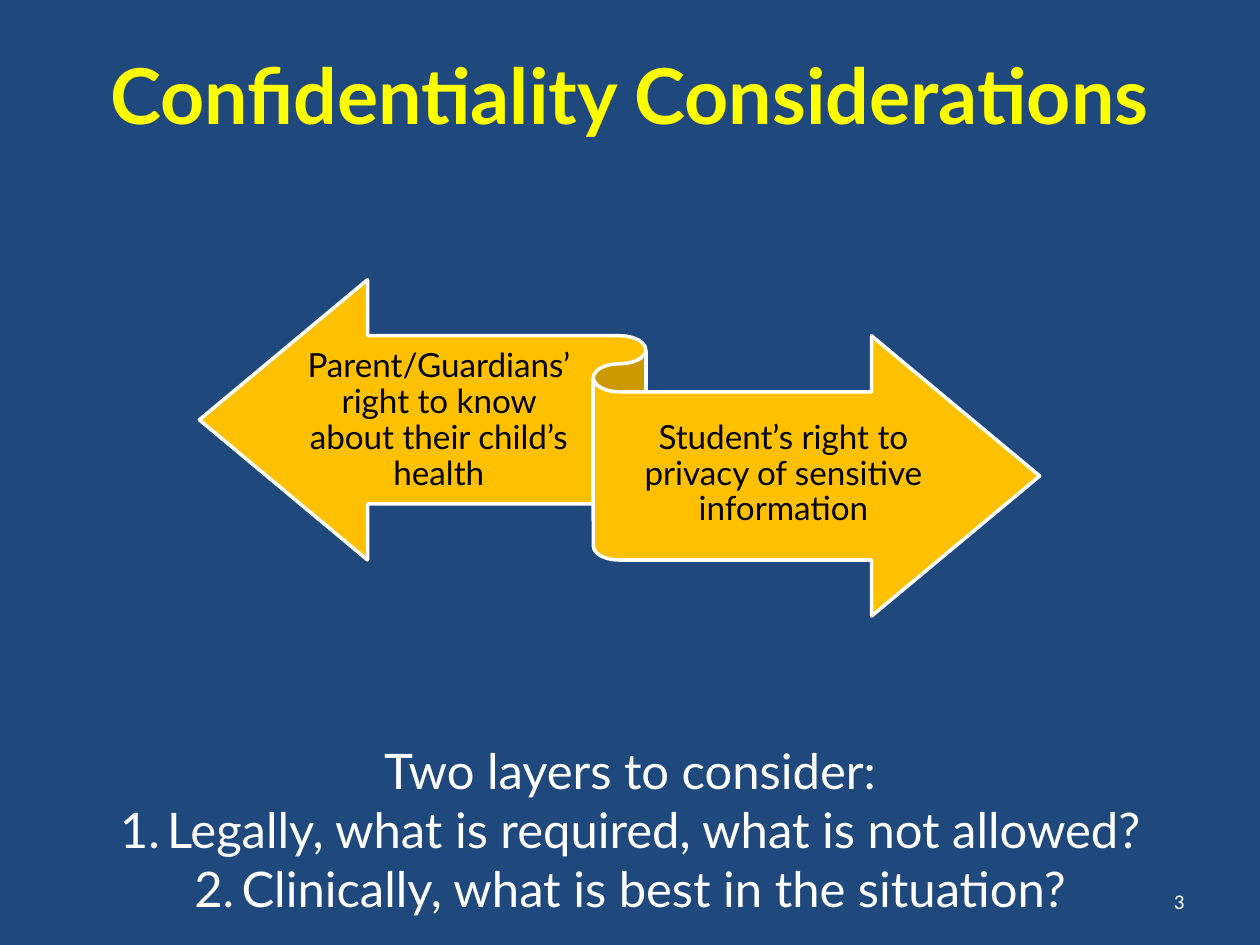
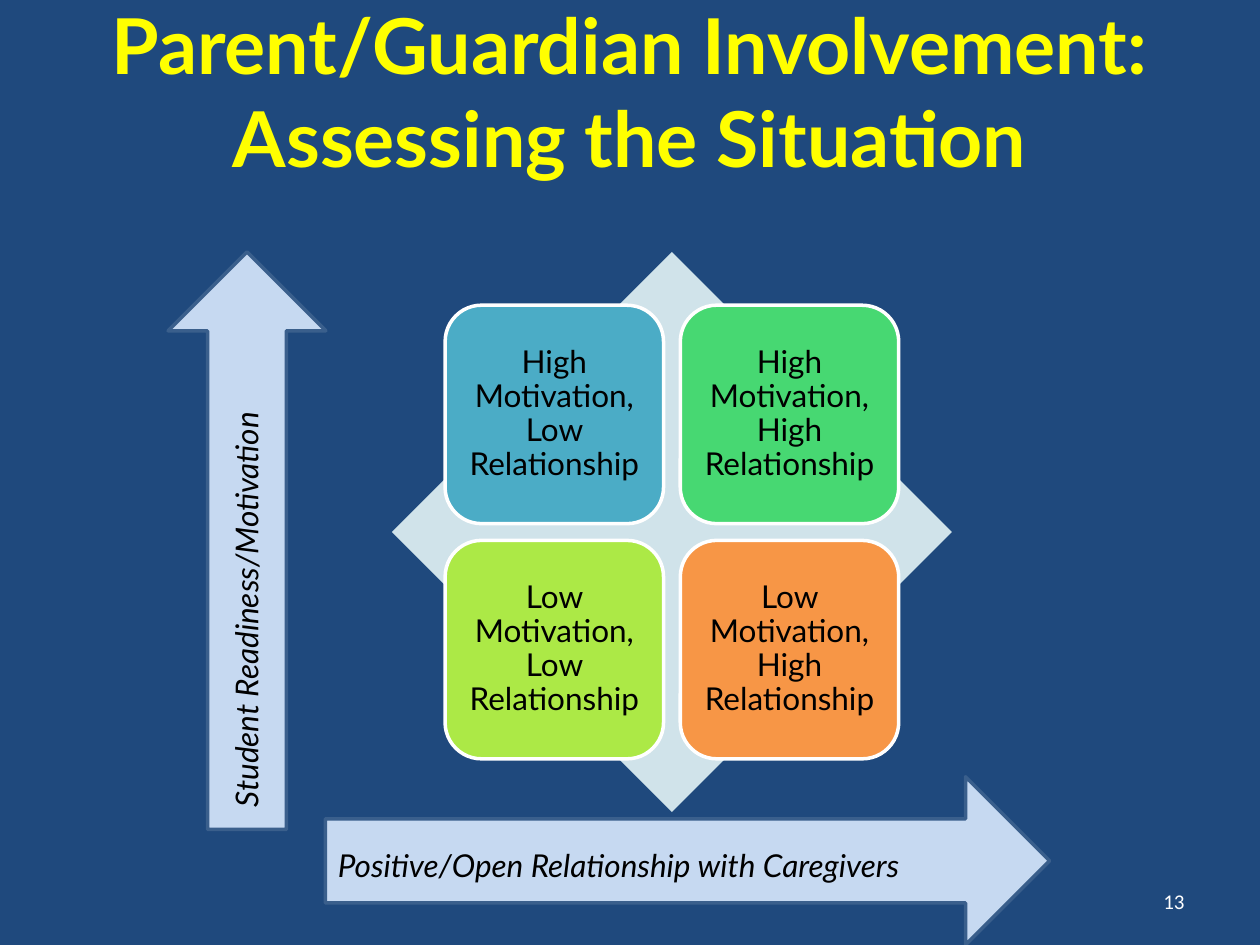
from lxml.etree import SubElement
from pptx import Presentation
from pptx.dml.color import RGBColor
from pptx.enum.shapes import MSO_SHAPE as SHAPE
from pptx.enum.text import MSO_ANCHOR as ANCHOR, MSO_AUTO_SIZE as FIT, PP_ALIGN as ALIGN
from pptx.oxml.ns import qn
from pptx.util import Cm, Pt

COLORS = {
    "background": "1F497D", "title": "FFFF00", "light": "FFFFFF", "dark": "000000",
    "ribbon": "FFC000", "diamond": "D0E3EA", "axis": "C6D9F1", "axis_line": "3A5F8C",
    "blue": "4BACC6", "green": "47D872", "lime": "ACE946", "orange": "F79646",
}
FONT = "Lato"
SLIDE_W, SLIDE_H = 25.4, 19.05
TITLE = {"size": 44, "color": "title", "bold": True}
LIST = {"size": 28, "color": "light"}
RIBBON_LABEL = {"size": 19, "color": "dark"}
TILE_LABEL = {"size": 18, "color": "dark"}
AXIS_LABEL = {"size": 18, "color": "dark", "italic": True}
PAGE_NUMBER = {"size": 12, "color": "light", "name": "Calibri"}


def rgb(name):
    return RGBColor.from_string(COLORS[name])


def place(sp, box):
    for side, value in zip(("left", "top", "width", "height"), box):
        setattr(sp, side, Cm(value))


def write(sp, lines, font, align=ALIGN.CENTER, anchor=ANCHOR.TOP, spacing=1.0, insets=None):
    """Fill a shape with paragraphs; insets are left, top, right, bottom in cm."""
    tf = sp.text_frame
    frame_format = {"word_wrap": True, "auto_size": FIT.NONE, "vertical_anchor": anchor}
    if insets:
        sides = ("margin_left", "margin_top", "margin_right", "margin_bottom")
        frame_format.update(zip(sides, map(Cm, insets)))
    for key, value in frame_format.items():
        setattr(tf, key, value)

    font_format = {"name": FONT, **font, "size": Pt(font["size"])}
    color = font_format.pop("color")
    for i, line in enumerate(lines):
        p = tf.paragraphs[0] if i == 0 else tf.add_paragraph()
        p.alignment, p.line_spacing, p.space_before = align, spacing, Pt(0)
        r = p.add_run()
        r.text = line
        for key, value in font_format.items():
            setattr(r.font, key, value)
        r.font.color.rgb = rgb(color)
    return tf


def add_text(slide, box, line, font, **layout):
    sp = slide.shapes.add_textbox(*map(Cm, box))
    write(sp, [line], font, **layout)
    return sp


def add_filled(slide, kind, box, fill, line=None):
    sp = slide.shapes.add_shape(kind, *map(Cm, box))
    sp.shadow.inherit = False
    sp.fill.solid()
    sp.fill.fore_color.rgb = rgb(fill)
    if line:
        sp.line.color.rgb = rgb(line)
        sp.line.width = Pt(2)
    else:
        sp.line.fill.background()
    return sp


def add_slide(prs, layout, title, title_box, title_anchor, number):
    slide = prs.slides.add_slide(prs.slide_layouts[layout])
    place(slide.shapes.title, title_box)
    write(slide.shapes.title, [title], TITLE, anchor=title_anchor)
    add_text(slide, (18.2, 17.65, 5.93, 1.02), number, PAGE_NUMBER,
             align=ALIGN.RIGHT, anchor=ANCHOR.MIDDLE)
    return slide


def add_ribbon(slide, box, left_text, right_text):
    left, top, width, height = box
    add_filled(slide, SHAPE.LEFT_RIGHT_RIBBON, box, "ribbon", "light")
    for text, x, y, w in ((left_text, 0.12, 0.175, 0.33), (right_text, 0.5, 0.335, 0.39)):
        label_box = (left + x * width, top + y * height, w * width, 0.49 * height)
        add_text(slide, label_box, text, RIBBON_LABEL, anchor=ANCHOR.MIDDLE,
                 spacing=0.9, insets=(0, 0.18, 0, 0.2))


def add_numbered_list(slide, box, heading, items):
    body = slide.placeholders[1]
    place(body, box)
    first, *rest = write(body, [heading, *items], LIST).paragraphs
    pPr = first._p.get_or_add_pPr()
    pPr.set("marL", "0")
    pPr.set("indent", "0")
    SubElement(pPr, qn("a:buNone"))
    for p in rest:
        pPr = p._p.get_or_add_pPr()
        SubElement(pPr, qn("a:buFont"), typeface=FONT)
        SubElement(pPr, qn("a:buAutoNum"), type="arabicPeriod")


def add_matrix(slide, box, rows):
    """Draw a diamond with a centred grid of rounded tiles over it."""
    left, top, side, _ = box
    tile, gap = 0.39 * side, 0.03 * side
    margin = (side - 2 * tile - gap) / 2
    add_filled(slide, SHAPE.DIAMOND, box, "diamond")
    for i, row in enumerate(rows):
        for j, (text, fill) in enumerate(row):
            tile_box = (left + margin + j * (tile + gap),
                        top + margin + i * (tile + gap), tile, tile)
            sp = add_filled(slide, SHAPE.ROUNDED_RECTANGLE, tile_box, fill, "light")
            write(sp, [text], TILE_LABEL, anchor=ANCHOR.MIDDLE, spacing=0.9,
                  insets=(0.18,) * 4)


def add_axis(slide, kind, box, text, label_box, rotation=0):
    """Draw a block arrow; label_box is relative to its top left corner."""
    add_filled(slide, kind, box, "axis", "axis_line")
    x, y, w, h = label_box
    label = add_text(slide, (box[0] + x, box[1] + y, w, h), text, AXIS_LABEL, align=ALIGN.LEFT)
    label.rotation = rotation


def build_confidentiality(prs):
    slide = add_slide(prs, 1, "Confidentiality Considerations",
                      (0, 0.84, SLIDE_W, 2.13), ANCHOR.TOP, "3")
    add_ribbon(slide, (4.02, 5.64, 16.94, 6.78),
               "Parent/Guardians’ right to know about their child’s health",
               "Student’s right to privacy of sensitive information")
    add_numbered_list(slide, (0, 14.81, SLIDE_W, 3.84), "Two layers to consider:",
                      ["Legally, what is required, what is not allowed?",
                       "Clinically, what is best in the situation?"])


def build_involvement(prs):
    slide = add_slide(prs, 5, "Parent/Guardian Involvement: Assessing the Situation",
                      (0, 1.07, SLIDE_W, 2.74), ANCHOR.BOTTOM, "13")
    add_matrix(slide, (7.9, 5.08, 11.29, 11.29), [
        [("High Motivation, Low Relationship", "blue"),
         ("High Motivation, High Relationship", "green")],
        [("Low Motivation, Low Relationship", "lime"),
         ("Low Motivation, High Relationship", "orange")],
    ])
    add_axis(slide, SHAPE.UP_ARROW, (3.39, 5.08, 3.18, 11.64),
             "Student Readiness/Motivation", (-2.98, 6.38, 9.1, 1.02), rotation=270)
    add_axis(slide, SHAPE.RIGHT_ARROW, (6.56, 15.66, 14.6, 3.39),
             "Positive/Open Relationship with Caregivers", (0, 1.28, 13.97, 1.02))


def main():
    prs = Presentation()
    prs.slide_width, prs.slide_height = Cm(SLIDE_W), Cm(SLIDE_H)
    fill = prs.slide_master.background.fill
    fill.solid()
    fill.fore_color.rgb = rgb("background")
    build_confidentiality(prs)
    build_involvement(prs)
    prs.save("out.pptx")


if __name__ == "__main__":
    main()
